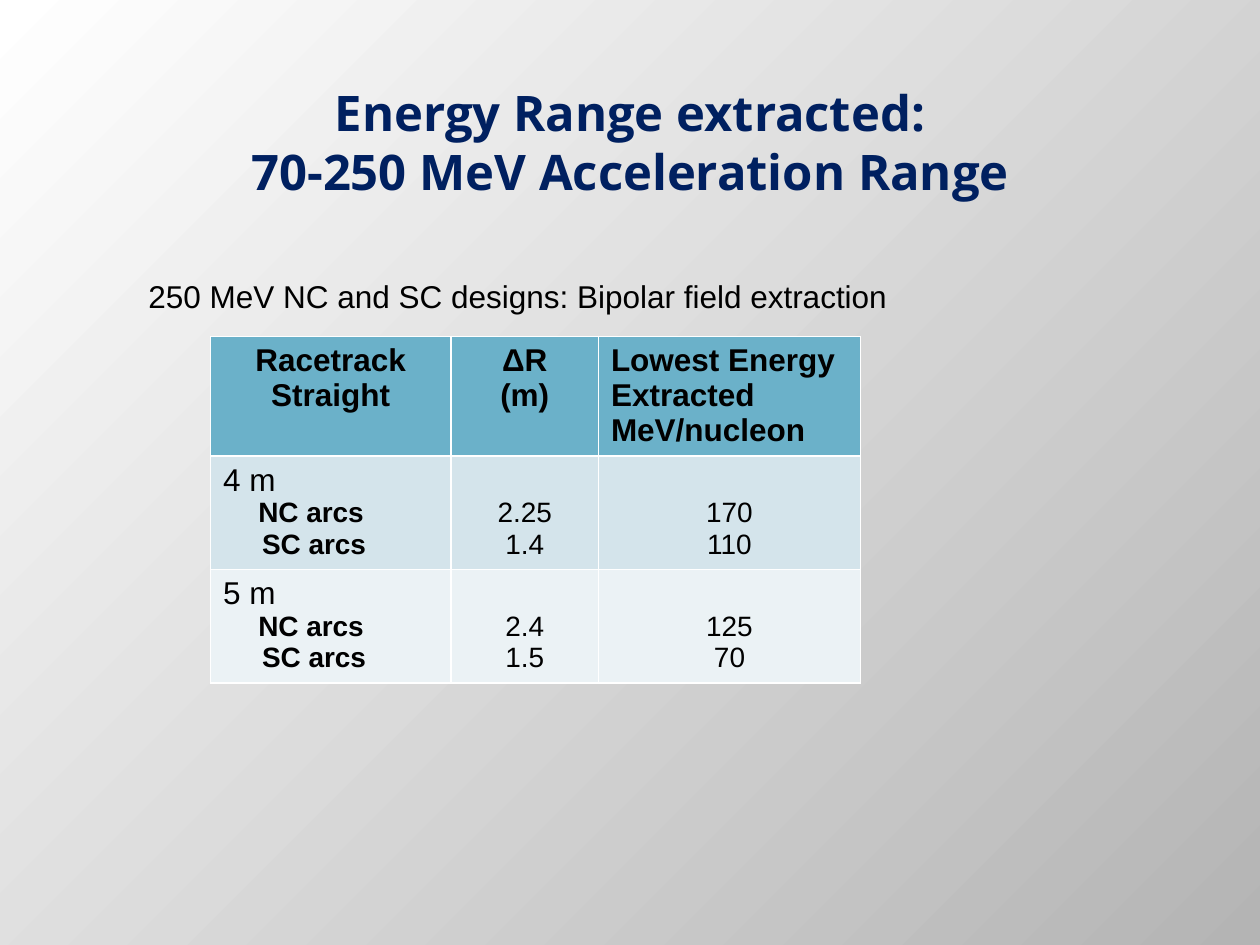
from pptx import Presentation
from pptx import util as u
from pptx.dml.color import RGBColor
from pptx.enum import text

COLORS = {
    "title": "002060", "ink": "000000", "header": "6BB1C9",
    "band_dark": "D4E4EB", "band_light": "EBF2F5",
    "glow": "FFFFFF", "shade": "B4B4B4",
}
LEFT, CENTER = text.PP_ALIGN.LEFT, text.PP_ALIGN.CENTER
HEAD = {"size": u.Pt(18), "bold": True}
LENGTH = {"size": u.Pt(18), "bold": False}
ARC = {"size": u.Pt(16), "bold": True}
VALUE = {"size": u.Pt(16), "bold": False}
HEADERS = [
    (["Racetrack", "Straight"], CENTER),
    (["ΔR", "(m)"], CENTER),
    (["Lowest Energy", "Extracted", "MeV/nucleon"], LEFT),
]
DESIGNS = [
    ("4 m", ["2.25", "1.4"], ["170", "110"], "band_dark"),
    ("5 m", ["2.4", "1.5"], ["125", "70"], "band_light"),
]
ARCS = [("NC arcs", 0.28), ("SC arcs", 0.31)]


def rgb(name):
    return RGBColor.from_string(COLORS[name])


def write(tf, lines, align=LEFT, color="ink", font="Arial"):
    for i, (line, style, indent) in enumerate(lines):
        p = tf.paragraphs[0] if i == 0 else tf.add_paragraph()
        p.alignment = align
        if indent:
            p._p.get_or_add_pPr().set("marL", str(u.Inches(indent)))
        p.text = line
        for r in p.runs:
            for key, value in {"name": font, **style}.items():
                setattr(r.font, key, value)
            r.font.color.rgb = rgb(color)


def fill_cell(cell, lines, fill, align=LEFT, top=0.05):
    cell.fill.solid()
    cell.fill.fore_color.rgb = rgb(fill)
    cell.margin_top = u.Inches(top)
    write(cell.text_frame, lines, align)


def paint_background(s):
    fill = s.background.fill
    fill.gradient()
    fill.gradient_angle = 315
    for stop, name, position in zip(fill.gradient_stops, ("glow", "shade"), (0, 1)):
        stop.color.rgb = rgb(name)
        stop.position = position


def add_title(s):
    sp = s.shapes.title
    box = {"left": 0.5, "top": 0.5, "width": 9, "height": 1.25}
    for key, value in box.items():
        setattr(sp, key, u.Inches(value))
    tf = sp.text_frame
    tf.vertical_anchor = text.MSO_ANCHOR.MIDDLE
    title = "Energy Range extracted:\v70-250 MeV Acceleration Range"
    style = {"size": u.Pt(28), "bold": True}
    write(tf, [(title, style, 0)], CENTER, "title", "Open Sans")


def add_caption(s):
    sp = s.shapes.add_textbox(*map(u.Inches, (1.08, 2.15, 6.33, 0.4)))
    sp.text_frame.word_wrap = True
    caption = "250 MeV NC and SC designs: Bipolar field extraction"
    write(sp.text_frame, [(caption, LENGTH, 0)])


def add_energy_table(s):
    table = s.shapes.add_table(3, 3, *map(u.Inches, (1.67, 2.67, 5.16, 2.75))).table
    for column, width in zip(table.columns, (1.91, 1.17, 2.08)):
        column.width = u.Inches(width)
    for row, height in zip(table.rows, (0.95, 0.9, 0.9)):
        row.height = u.Inches(height)
    for col, (lines, align) in enumerate(HEADERS):
        fill_cell(table.cell(0, col), [(line, HEAD, 0) for line in lines], "header", align)
    for row, (length, radii, energies, fill) in enumerate(DESIGNS, 1):
        arcs = [(arc, ARC, indent) for arc, indent in ARCS]
        fill_cell(table.cell(row, 0), [(length, LENGTH, 0)] + arcs, fill)
        for col, values in enumerate((radii, energies), 1):
            lines = [(value, VALUE, 0) for value in values]
            fill_cell(table.cell(row, col), lines, fill, CENTER, 0.33)


def main():
    prs = Presentation()
    prs.slide_width, prs.slide_height = u.Inches(10), u.Inches(7.5)
    s = prs.slides.add_slide(prs.slide_layouts[5])
    paint_background(s)
    add_title(s)
    add_energy_table(s)
    add_caption(s)
    prs.save("out.pptx")


if __name__ == "__main__":
    main()
